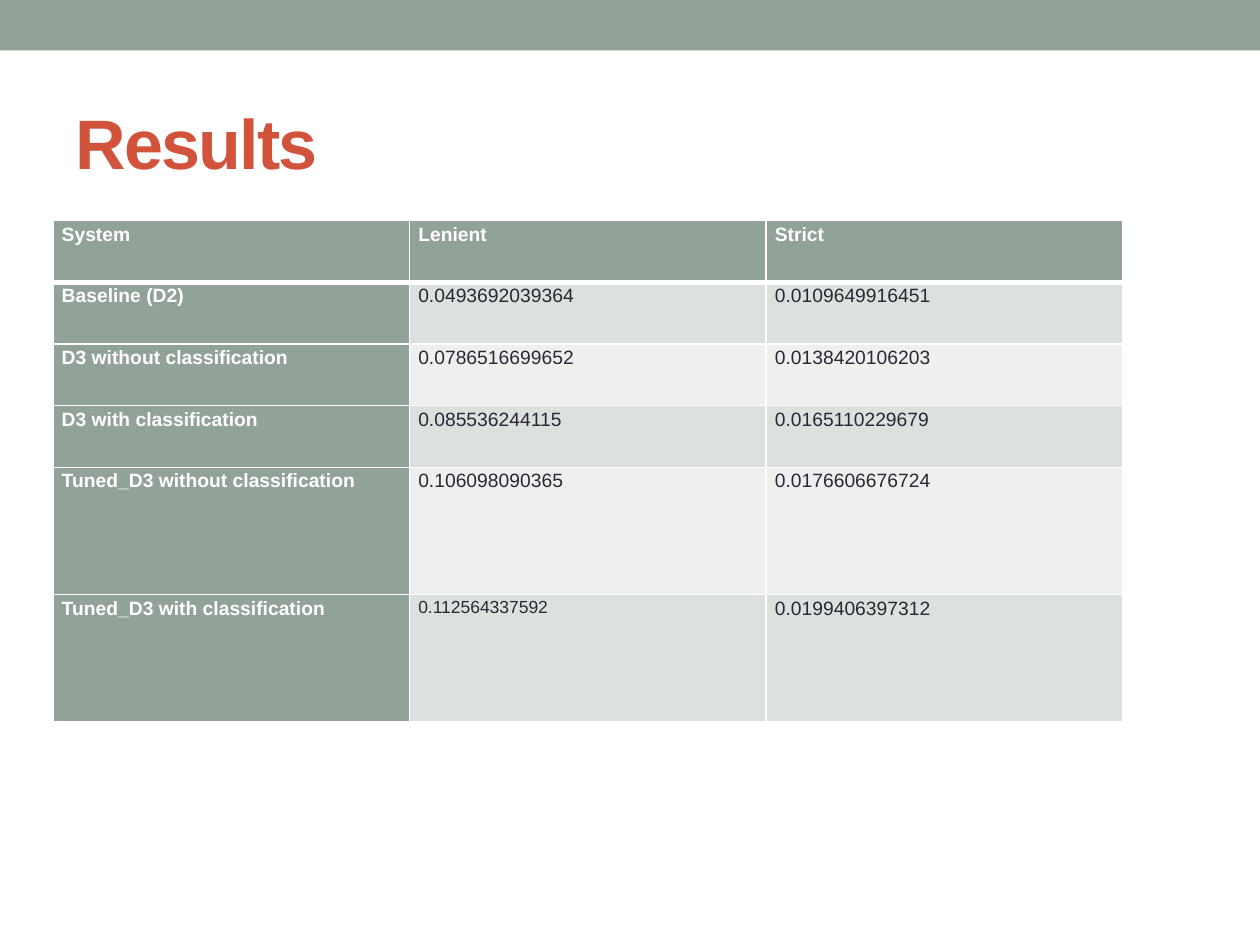
from lxml import etree
from pptx import Presentation
from pptx.dml.color import RGBColor
from pptx.enum.shapes import MSO_SHAPE
from pptx.enum.text import MSO_ANCHOR
from pptx.oxml.ns import qn
from pptx.util import Inches, Pt

W, H = 10, 7.5
COLORS = {
    "sage": "93A299", "rust": "D2533C", "ink": "292934", "white": "FFFFFF",
    "band_dark": "DCE0DE", "band_light": "EEF0EF",
}
HEADER = ("System", "Lenient", "Strict")
RESULTS = [
    ("Baseline (D2)", "0.0493692039364", "0.0109649916451"),
    ("D3 without classification", "0.0786516699652", "0.0138420106203"),
    ("D3 with classification", "0.085536244115", "0.0165110229679"),
    ("Tuned_D3 without classification", "0.106098090365", "0.0176606676724"),
    ("Tuned_D3 with classification", "0.112564337592", "0.0199406397312"),
]
ROW_HEIGHTS = [0.49] * 4 + [1.01] * 2
SMALL_CELL = (5, 1)


def rgb(name):
    return RGBColor.from_string(COLORS[name])


def write(tf, text, size=11, color="ink", bold=False, line=None, spacing=None):
    p = tf.paragraphs[0]
    p.line_spacing = line
    r = p.add_run()
    r.text = text
    r.font.name = "Arial"
    r.font.size = Pt(size)
    r.font.bold = bold
    r.font.color.rgb = rgb(color)
    if spacing is not None:
        r.font._element.set("spc", str(spacing))


def set_borders(cell, **widths):
    """Give the cell white borders; the lines must precede its fill."""
    tcPr = cell._tc.get_or_add_tcPr()
    for i, side in enumerate("LRTB"):
        ln = etree.Element(qn(f"a:ln{side}"), w=str(Pt(widths.get(side, 1))))
        fill = etree.SubElement(ln, qn("a:solidFill"))
        etree.SubElement(fill, qn("a:srgbClr"), val=COLORS["white"])
        tcPr.insert(i, ln)


def add_top_band(s, x, y, w, h):
    band = s.shapes.add_shape(MSO_SHAPE.RECTANGLE, *map(Inches, (x, y, w, h)))
    band.shadow.inherit = False
    band.fill.solid()
    band.fill.fore_color.rgb = rgb("sage")
    band.line.fill.background()


def add_title(s, x, y, w, h):
    tf = s.shapes.add_textbox(*map(Inches, (x, y, w, h))).text_frame
    tf.word_wrap = True
    tf.vertical_anchor = MSO_ANCHOR.MIDDLE
    write(tf, "Results", size=40, color="rust", bold=True, spacing=-100)


def add_results_table(s, x, y, w, h):
    rows = [HEADER] + RESULTS
    box = map(Inches, (x, y, w, h))
    table = s.shapes.add_table(len(rows), len(HEADER), *box).table
    for col in table.columns:
        col.width = Inches(w / len(HEADER))
    for row, height in zip(table.rows, ROW_HEIGHTS):
        row.height = Inches(h * height / sum(ROW_HEIGHTS))

    for i, values in enumerate(rows):
        for j, value in enumerate(values):
            cell = table.cell(i, j)
            heading = i == 0 or j == 0
            band = "band_dark" if i % 2 else "band_light"
            cell.margin_left = cell.margin_right = Inches(0.07)
            cell.margin_top = cell.margin_bottom = 0
            cell.fill.solid()
            cell.fill.fore_color.rgb = rgb("sage" if heading else band)
            # The header is set off by a thicker rule
            set_borders(cell, T=3 if i == 1 else 1, B=3 if i == 0 else 1)
            write(cell.text_frame, value, bold=heading, line=1.15,
                  size=10 if (i, j) == SMALL_CELL else 11,
                  color="white" if heading else "ink")


def main():
    prs = Presentation()
    prs.slide_width, prs.slide_height = Inches(W), Inches(H)
    s = prs.slides.add_slide(prs.slide_layouts[6])
    add_top_band(s, 0, 0, W, 0.4)
    add_title(s, 0.05 * W, 0.58, 0.9 * W, 1.08)
    add_results_table(s, 0.042 * W, 1.75, 0.849 * W, sum(ROW_HEIGHTS))
    prs.save("out.pptx")


if __name__ == "__main__":
    main()
